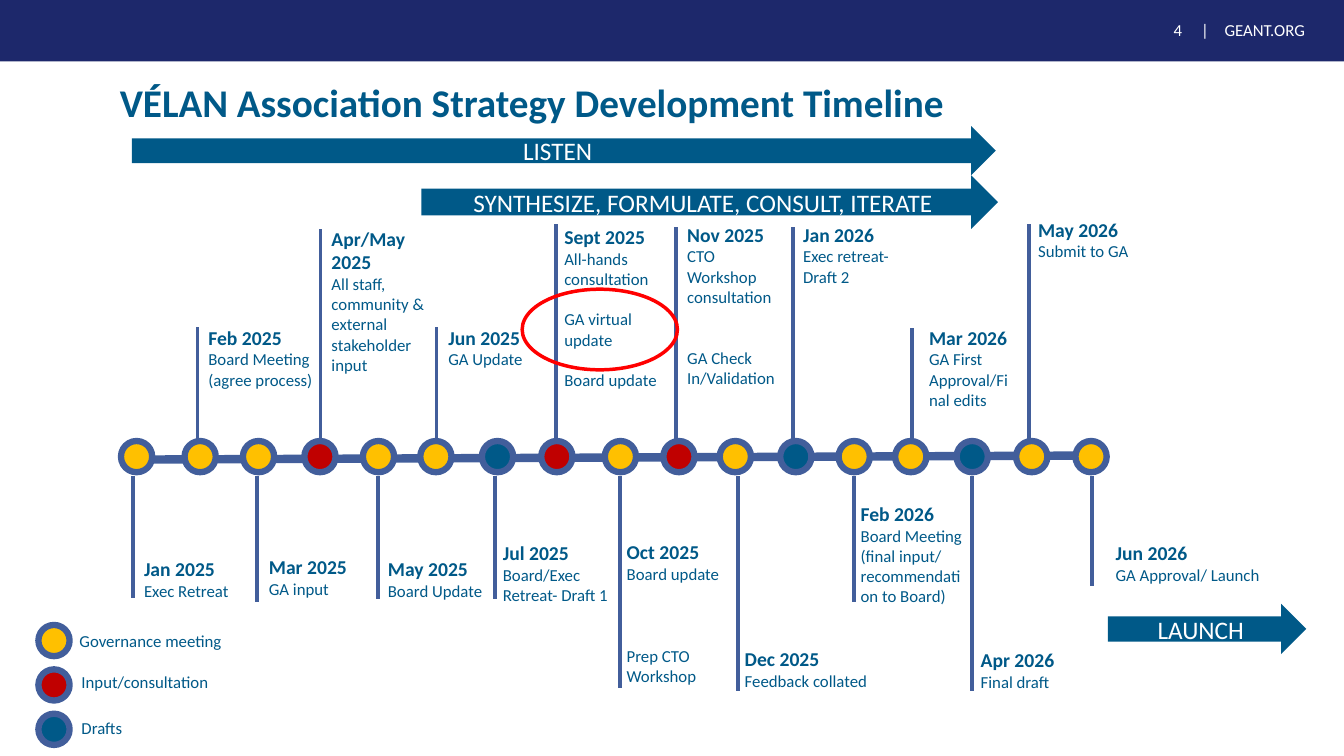
from dataclasses import dataclass

from pptx import Presentation
from pptx.dml.color import RGBColor
from pptx.enum.shapes import MSO_CONNECTOR, MSO_SHAPE
from pptx.enum.text import MSO_ANCHOR, PP_ALIGN
from pptx.oxml.ns import qn
from pptx.util import Pt
from lxml import etree

OVAL, RECTANGLE, ARROW = MSO_SHAPE.OVAL, MSO_SHAPE.RECTANGLE, MSO_SHAPE.RIGHT_ARROW
STRAIGHT = MSO_CONNECTOR.STRAIGHT
LEFT, CENTER, RIGHT = PP_ALIGN.LEFT, PP_ALIGN.CENTER, PP_ALIGN.RIGHT
TOP, MIDDLE = MSO_ANCHOR.TOP, MSO_ANCHOR.MIDDLE

FONT = "Calibri"
COLORS = {
    "navy": "1D286B", "teal": "005988", "axis": "425E9B", "white": "FFFFFF",
    "governance": "FFC000", "input": "C00000", "drafts": "005988", "highlight": "FF0000",
}
DOT_SIZE = 22.3
DOT_TOP = 315
STEM_BELOW = 340  # where the downward stems leave the dots
BLANK_LINE = 14.65  # height of one 12 pt line


@dataclass
class Line:
    text: str
    size: float = 12
    bold: bool = False
    gap: float = 0
    color: str = "teal"


@dataclass
class Event:
    month: str
    details: list[Line]
    kind: str
    dot_left: float
    stem_x: float
    stem_end: float
    left: float
    top: float
    width: float


@dataclass
class Phase:
    name: str
    left: float
    top: float
    width: float
    height: float


@dataclass
class LegendEntry:
    kind: str
    label: str
    left: float
    top: float


EVENTS = [
    Event("Jan 2025", [Line("Exec Retreat")], "governance", 86.4, 95, 427, 95.8, 394.6, 88),
    Event("Feb 2025", [Line("Board Meeting (agree process)")],
          "governance", 131.8, 141.1, 233.3, 141.8, 229, 103.7),
    Event("Mar 2025", [Line("GA input")], "governance", 173.5, 183.6, 429.8, 185, 393.1, 108.7),
    Event("Apr/May 2025", [Line("All staff, community & external stakeholder input")],
          "input", 217.4, 229, 163.4, 229.7, 158.4, 85),
    Event("May 2025", [Line("Board Update")], "governance", 259.2, 270, 427.7, 270, 394.6, 88),
    Event("Jun 2025", [Line("GA Update")], "governance", 300.2, 311.8, 233.3, 313.2, 229, 74.2),
    Event("Jul 2025", [Line("Board/Exec Retreat- Draft 1")],
          "drafts", 344.2, 353.5, 427.7, 352.1, 383, 91.4),
    Event("Sept 2025", [Line("All-hands consultation"),
                        Line("GA virtual update", gap=BLANK_LINE),
                        Line("Board update", gap=BLANK_LINE)],
          "input", 386.6, 397.4, 159.8, 396, 157, 87.1),
    Event("Oct 2025", [Line("Board update"), Line("Prep CTO Workshop", gap=3 * BLANK_LINE)],
          "governance", 432, 442.8, 491.8, 440.6, 382.3, 88.6),
    Event("Nov 2025", [Line("CTO Workshop consultation"),
                       Line("GA Check In/Validation", gap=2 * BLANK_LINE)],
          "input", 473.8, 483.1, 162, 483.8, 155.5, 78.5),
    Event("Dec 2025", [Line("Feedback collated")],
          "governance", 514.1, 527, 493.9, 524.9, 458.6, 113),
    Event("Jan 2026", [Line("Exec retreat- Draft 2")],
          "drafts", 557.3, 566.6, 162, 566.6, 155.5, 81.4),
    Event("Feb 2026", [Line("Board Meeting (final input/ recommendation to Board)")],
          "governance", 599, 609.8, 429.8, 607.7, 355, 88.6),
    Event("Mar 2026", [Line("GA First Approval/Final edits")],
          "governance", 639.4, 651.6, 234, 656.6, 229, 76.3),
    Event("Apr 2026", [Line("Final draft")], "drafts", 683.3, 694.1, 493.9, 693.4, 459.4, 100.8),
    Event("May 2026", [Line("Submit to GA")],
          "governance", 725.8, 735.1, 159.8, 734.4, 151.9, 118),
    Event("Jun 2026", [Line("GA Approval/ Launch")],
          "governance", 768.2, 779.8, 418.3, 789.8, 383, 125.3),
]
PHASES = [
    Phase("LISTEN", 94.3, 90, 617, 35.3),
    Phase("SYNTHESIZE, FORMULATE, CONSULT, ITERATE", 301, 125.3, 411.8, 38.2),
    Phase("LAUNCH", 791.3, 431.3, 141.8, 36),
]
LEGEND = [
    LegendEntry("governance", "Governance meeting", 49.7, 447.1),
    LegendEntry("input", "Input/consultation", 51.1, 476.6),
    LegendEntry("drafts", "Drafts", 51.1, 509),
]


def rgb(name: str) -> RGBColor:
    return RGBColor.from_string(COLORS[name])


def write(frame, lines: list[Line], align=LEFT, anchor=TOP, spacing: float = 1) -> None:
    frame.word_wrap = True
    frame.vertical_anchor = anchor
    for index, line in enumerate(lines):
        paragraph = frame.add_paragraph() if index else frame.paragraphs[0]
        paragraph.text = line.text
        paragraph.alignment = align
        paragraph.line_spacing = spacing
        if line.gap:
            paragraph.space_before = Pt(line.gap)
        font = paragraph.font
        font.name, font.size, font.bold = FONT, Pt(line.size), line.bold
        font.color.rgb = rgb(line.color)


def add_text(slide, left: float, top: float, width: float, height: float,
             lines: list[Line], **layout) -> None:
    box = slide.shapes.add_textbox(Pt(left), Pt(top), Pt(width), Pt(height))
    write(box.text_frame, lines, **layout)


def add_shape(slide, preset, left: float, top: float, width: float, height: float,
              fill: str = "", line: str = "", weight: float = 0):
    shape = slide.shapes.add_shape(preset, Pt(left), Pt(top), Pt(width), Pt(height))
    shape.shadow.inherit = False
    if fill:
        shape.fill.solid()
        shape.fill.fore_color.rgb = rgb(fill)
    else:
        shape.fill.background()
    if line:
        shape.line.color.rgb = rgb(line)
        shape.line.width = Pt(weight)
    else:
        shape.line.fill.background()
    return shape


def add_dot(slide, left: float, top: float, kind: str) -> None:
    add_shape(slide, OVAL, left, top, DOT_SIZE, DOT_SIZE, kind, "axis", 4.5)


def add_line(slide, x1: float, y1: float, x2: float, y2: float, weight: float) -> None:
    line = slide.shapes.add_connector(STRAIGHT, Pt(x1), Pt(y1), Pt(x2), Pt(y2))
    line.line.color.rgb = rgb("axis")
    line.line.width = Pt(weight)
    etree.SubElement(line._element.spPr, qn("a:effectLst"))


def main() -> None:
    deck = Presentation()
    deck.slide_width, deck.slide_height = Pt(960), Pt(540)
    slide = deck.slides.add_slide(deck.slide_layouts[6])

    # Header and title
    add_shape(slide, RECTANGLE, 0, 0, 960, 43.9, "navy")
    for text, right in (("4", 851.5), ("|", 870.5)):
        add_text(slide, right - 40, 8.6, 40, 26, [Line(text, color="white")],
                 align=RIGHT, anchor=MIDDLE)
    add_text(slide, 867.6, 10.8, 92, 23, [Line("GEANT.ORG", color="white")],
             anchor=MIDDLE, spacing=0.9)
    add_text(slide, 78.5, 49, 779, 51,
             [Line("VÉLAN Association Strategy Development Timeline", 28, True)],
             anchor=MIDDLE, spacing=0.9)

    # Timeline: axis, stems, dots, then labels
    add_line(slide, 95, 328.3, 779.8, 325.4, 6)
    for event in EVENTS:
        stem_start = DOT_TOP if event.stem_end < DOT_TOP else STEM_BELOW
        add_line(slide, event.stem_x, stem_start, event.stem_x, event.stem_end, 2.75)
    for event in EVENTS:
        add_dot(slide, event.dot_left, DOT_TOP, event.kind)
    for event in EVENTS:
        add_text(slide, event.left, event.top, event.width, 39,
                 [Line(event.month, 14, True), *event.details])

    # Phase arrows
    for phase in PHASES:
        arrow = add_shape(slide, ARROW, phase.left, phase.top, phase.width, phase.height, "teal")
        write(arrow.text_frame, [Line(phase.name, 18, color="white")], CENTER, MIDDLE)

    # Legend
    for row, entry in enumerate(LEGEND):
        add_dot(slide, 27.4, 446.4 + row * 31.7, entry.kind)
        add_text(slide, entry.left, entry.top, 206, 21.6, [Line(entry.label)])

    # Highlight around the virtual update
    add_shape(slide, OVAL, 373, 206.6, 110.9, 57.6, line="highlight", weight=2.5)

    deck.save("out.pptx")


if __name__ == "__main__":
    main()
